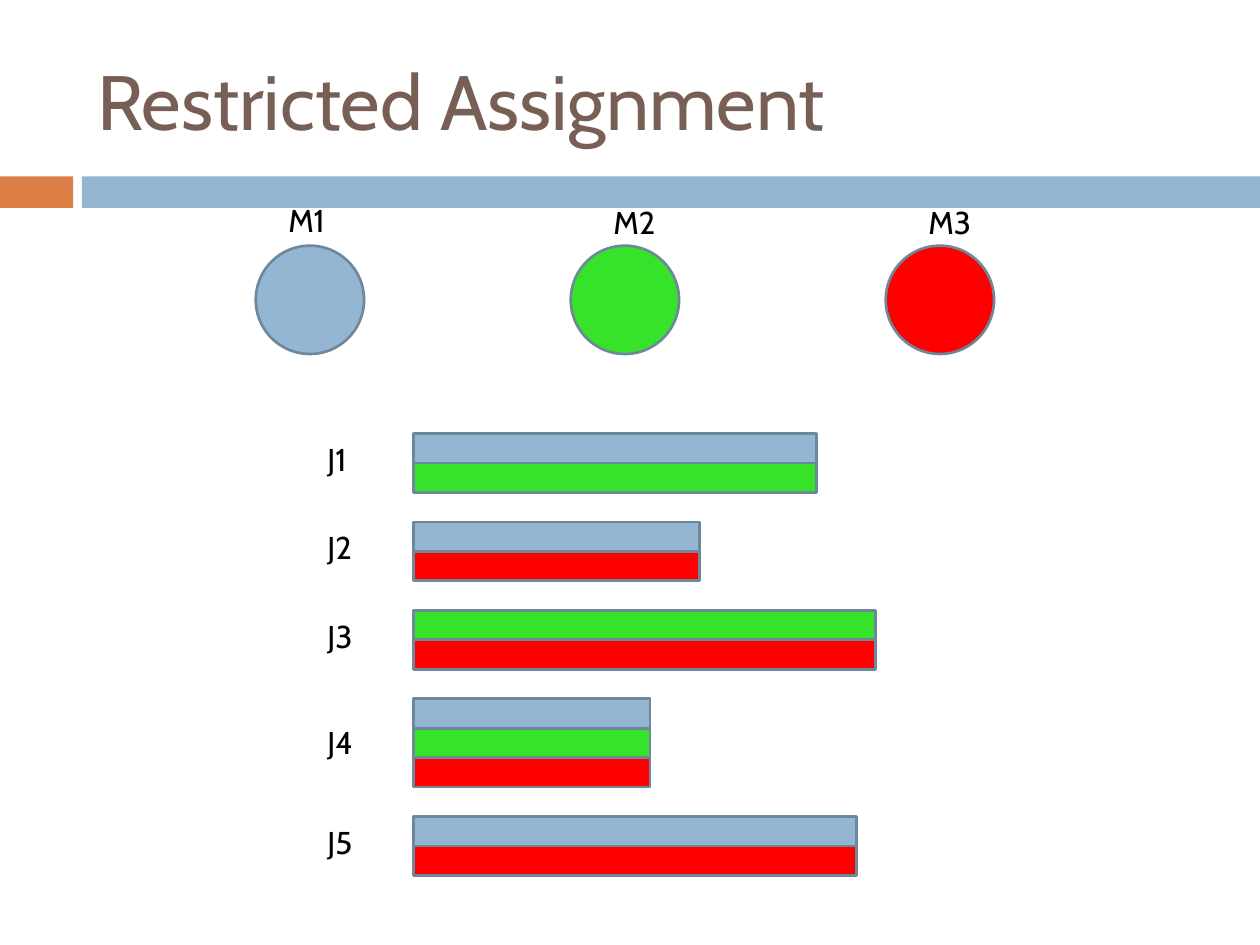
from pptx import Presentation
from pptx.dml.color import RGBColor
from pptx.enum.shapes import MSO_SHAPE
from pptx.enum.text import MSO_ANCHOR, MSO_AUTO_SIZE, PP_ALIGN
from pptx.util import Inches, Pt

RECTANGLE, OVAL = MSO_SHAPE.RECTANGLE, MSO_SHAPE.OVAL
LEFT, MIDDLE, TOP = PP_ALIGN.LEFT, MSO_ANCHOR.MIDDLE, MSO_ANCHOR.TOP
FIT_SHAPE, NO_FIT = MSO_AUTO_SIZE.SHAPE_TO_FIT_TEXT, MSO_AUTO_SIZE.NONE
TITLE_ONLY = 5

BLUE, GREEN, RED = "94B6D2", "37E22A", "FF0000"
ORANGE, BROWN, BLACK, OUTLINE = "DD8047", "775F55", "000000", "6D879B"

# name, colour, label left, label top
MACHINES = [
    ("M1", BLUE, 2.19, 1.55),
    ("M2", GREEN, 4.77, 1.56),
    ("M3", RED, 7.27, 1.56),
]
# name, length, colours of the machines that may run the job
JOBS = [
    ("J1", 3.2, [BLUE, GREEN]),
    ("J2", 2.27, [BLUE, RED]),
    ("J3", 3.67, [GREEN, RED]),
    ("J4", 1.88, [BLUE, GREEN, RED]),
    ("J5", 3.52, [BLUE, RED]),
]
MACHINE_LEFT, MACHINE_TOP, MACHINE_STEP, DIAMETER = 2.03, 1.95, 2.5, 0.86
JOB_LEFT, JOBS_TOP, JOBS_BOTTOM = 3.28, 3.44, 6.95
LABEL_LEFT, LABEL_WIDTH, LABEL_HEIGHT = 2.5, 0.86, 0.4
EXTRA_BAR_SHIFT = 0.14


def color(value):
    return RGBColor.from_string(value)


def write(frame, text, size=18, fill=BLACK, font="Cabin", anchor=TOP, fit=NO_FIT):
    frame.word_wrap = True
    frame.auto_size = fit
    frame.vertical_anchor = anchor
    paragraph = frame.paragraphs[0]
    paragraph.alignment = LEFT
    run = paragraph.add_run()
    run.text = text
    run.font.name = font
    run.font.size = Pt(size)
    run.font.color.rgb = color(fill)


class SlideBuilder:
    def __init__(self, slide, outline=OUTLINE, line_width=1.5):
        self.slide = slide
        self.outline = outline
        self.line_width = line_width

    def title(self, text, left, top, width, height):
        title = self.slide.shapes.title
        title.left, title.top = Inches(left), Inches(top)
        title.width, title.height = Inches(width), Inches(height)
        write(title.text_frame, text, size=44, fill=BROWN, anchor=MIDDLE)

    def shape(self, kind, left, top, width, height, fill, outlined=True):
        shape = self.slide.shapes.add_shape(
            kind, Inches(left), Inches(top), Inches(width), Inches(height))
        shape.shadow.inherit = False
        shape.fill.solid()
        shape.fill.fore_color.rgb = color(fill)
        if outlined:
            shape.line.color.rgb = color(self.outline)
            shape.line.width = Pt(self.line_width)
        else:
            shape.line.fill.background()

    def label(self, text, left, top):
        box = self.slide.shapes.add_textbox(
            Inches(left), Inches(top), Inches(LABEL_WIDTH), Inches(LABEL_HEIGHT))
        write(box.text_frame, text, fit=FIT_SHAPE)


def add_machines(builder):
    for index, (name, fill, label_left, label_top) in enumerate(MACHINES):
        left = MACHINE_LEFT + index * MACHINE_STEP
        builder.shape(OVAL, left, MACHINE_TOP, DIAMETER, DIAMETER, fill)
        builder.label(name, label_left, label_top)


def add_jobs(builder):
    """Stack one bar per allowed machine, with a gap of one bar between jobs."""
    bar_count = sum(len(fills) for _, _, fills in JOBS)
    bar_height = (JOBS_BOTTOM - JOBS_TOP) / (bar_count + len(JOBS) - 1)
    top = JOBS_TOP
    for name, length, fills in JOBS:
        builder.label(name, LABEL_LEFT, top + (len(fills) - 2) * EXTRA_BAR_SHIFT)
        for fill in fills:
            builder.shape(RECTANGLE, JOB_LEFT, top, length, bar_height, fill)
            top += bar_height
        top += bar_height


def main():
    presentation = Presentation()
    presentation.slide_width, presentation.slide_height = Inches(10), Inches(7.5)
    slide = presentation.slides.add_slide(presentation.slide_layouts[TITLE_ONLY])
    builder = SlideBuilder(slide)
    builder.shape(RECTANGLE, 0, 1.4, 0.58, 0.25, ORANGE, outlined=False)
    builder.shape(RECTANGLE, 0.65, 1.4, 9.35, 0.25, BLUE, outlined=False)
    builder.title("Restricted Assignment", 0.67, 0.25, 8.92, 1.08)
    add_machines(builder)
    add_jobs(builder)
    presentation.save("out.pptx")


if __name__ == "__main__":
    main()
